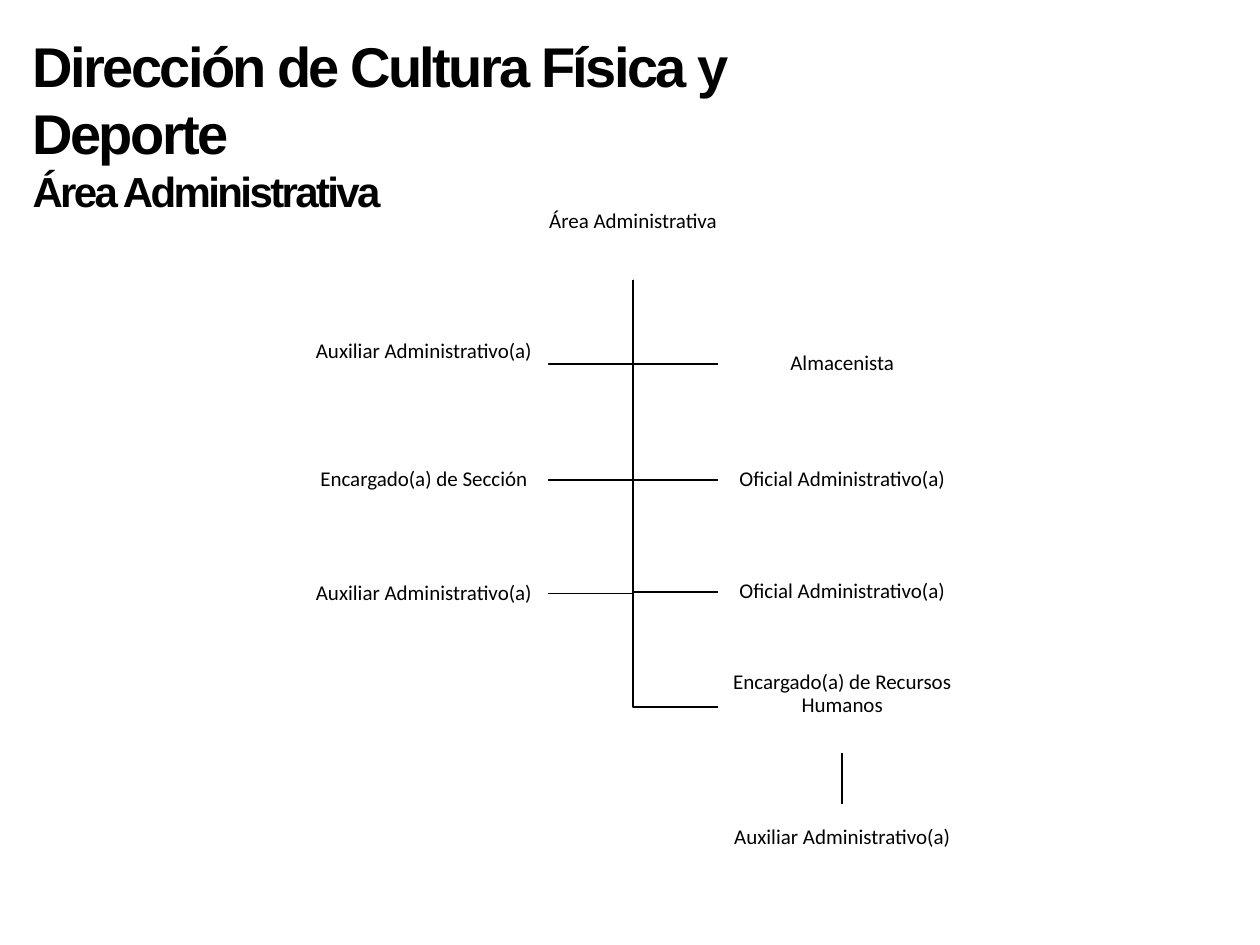
from lxml import etree
from pptx import Presentation
from pptx.enum import shapes, text
from pptx.dml.color import RGBColor
from pptx.oxml import ns
from pptx.util import Inches, Pt

# Content
TITLE = "Dirección de Cultura Física y Deporte"
SUBTITLE = "Área Administrativa"
ROOT = "Área Administrativa"
# name, top of the box, and whether the text sits half a line high
LEFT_POSTS = [
    ("Auxiliar Administrativo(a)", 2.52, True),
    ("Encargado(a) de Sección", 3.44, False),
    ("Auxiliar Administrativo(a)", 4.34, False),
]
RIGHT_POSTS = [
    ("Almacenista", 2.52, False),
    ("Oficial Administrativo(a)", 3.44, False),
    ("Oficial Administrativo(a)", 4.33, False),
    ("Encargado(a) de Recursos Humanos", 5.24, True),
]
ASSISTANT = ("Auxiliar Administrativo(a)", 6.38, True)

# Layout and style
COLORS = {"ink": "000000", "paper": "FFFFFF"}
BOX_W, BOX_H = 1.97, 0.74
LEFT_X, RIGHT_X = 2.38, 5.7
TRUNK_X = (LEFT_X + BOX_W + RIGHT_X) / 2
TRUNK_TOP = 2.22
PAD, LINE_H = 0.01, 0.2


def rgb(name):
    return RGBColor.from_string(COLORS[name])


def write(paragraph, words, size=12, font="Calibri", bold=False, spacing=0,
          align=None, line_spacing=None):
    run = paragraph.add_run()
    run.text = words
    run.font.size, run.font.name, run.font.bold = Pt(size), font, bold
    run.font.color.rgb = rgb("ink")
    if spacing:
        run.font._element.set("spc", str(int(spacing * 100)))
    if align is not None:
        paragraph.alignment = align
    if line_spacing:
        paragraph.line_spacing = line_spacing


def label(shape, words, raised=False):
    frame = shape.text_frame
    frame.word_wrap = True
    frame.vertical_anchor = text.MSO_ANCHOR.MIDDLE
    frame.margin_left = frame.margin_right = frame.margin_top = Inches(PAD)
    frame.margin_bottom = Inches(PAD + (LINE_H if raised else 0))
    write(frame.paragraphs[0], words, align=text.PP_ALIGN.CENTER, line_spacing=0.9)


def post_box(slide, x, post):
    words, top, raised = post
    box = slide.shapes.add_shape(shapes.MSO_SHAPE.RECTANGLE, Inches(x), Inches(top),
                                 Inches(BOX_W), Inches(BOX_H))
    box.shadow.inherit = False
    box.fill.solid()
    box.fill.fore_color.rgb = rgb("paper")
    box.line.fill.background()
    label(box, words, raised)
    return box


def ink_line(line):
    line.color.rgb = rgb("ink")
    line.width = Pt(1)


def branch(slide, side_x, top):
    """Elbow from the top of the trunk to the side of a post box."""
    mid_y = Inches(top + BOX_H / 2)
    builder = slide.shapes.build_freeform(Inches(TRUNK_X), Inches(TRUNK_TOP))
    builder.add_line_segments([(Inches(TRUNK_X), mid_y), (Inches(side_x), mid_y)],
                              close=False)
    elbow = builder.convert_to_shape()
    elbow.shadow.inherit = False
    elbow.fill.background()
    ink_line(elbow.line)


def main():
    prs = Presentation()
    prs.slide_width, prs.slide_height = Inches(10), Inches(7.5)
    slide = prs.slides.add_slide(prs.slide_layouts[6])

    # Branches, behind the boxes
    for _, top, _ in RIGHT_POSTS:
        branch(slide, RIGHT_X, top)
    for _, top, _ in LEFT_POSTS:
        branch(slide, LEFT_X + BOX_W, top)

    # Root of the chart
    root_w, root_h = 2.17, 0.9
    root = slide.shapes.add_textbox(Inches(TRUNK_X - root_w / 2), Inches(1.31),
                                    Inches(root_w), Inches(root_h))
    label(root, ROOT)

    # Posts
    for post in LEFT_POSTS:
        post_box(slide, LEFT_X, post)
    right_boxes = [post_box(slide, RIGHT_X, post) for post in RIGHT_POSTS]
    assistant = post_box(slide, RIGHT_X, ASSISTANT)

    # Human resources to its assistant
    link = slide.shapes.add_connector(shapes.MSO_CONNECTOR.STRAIGHT, 0, 0, 0, 0)
    link.begin_connect(right_boxes[-1], 2)
    link.end_connect(assistant, 0)
    ink_line(link.line)
    etree.SubElement(link._element.spPr, ns.qn("a:effectLst"))

    # Heading
    heading = slide.shapes.add_textbox(Inches(0.16), Inches(0.2), Inches(7.25), Inches(1.58))
    frame = heading.text_frame
    frame.word_wrap = True
    frame.auto_size = text.MSO_AUTO_SIZE.SHAPE_TO_FIT_TEXT
    for paragraph, words, size in ((frame.paragraphs[0], TITLE, 32),
                                   (frame.add_paragraph(), SUBTITLE, 24)):
        write(paragraph, words, size=size, font="Arial", bold=True, spacing=-1.5)

    prs.save("out.pptx")


if __name__ == "__main__":
    main()
